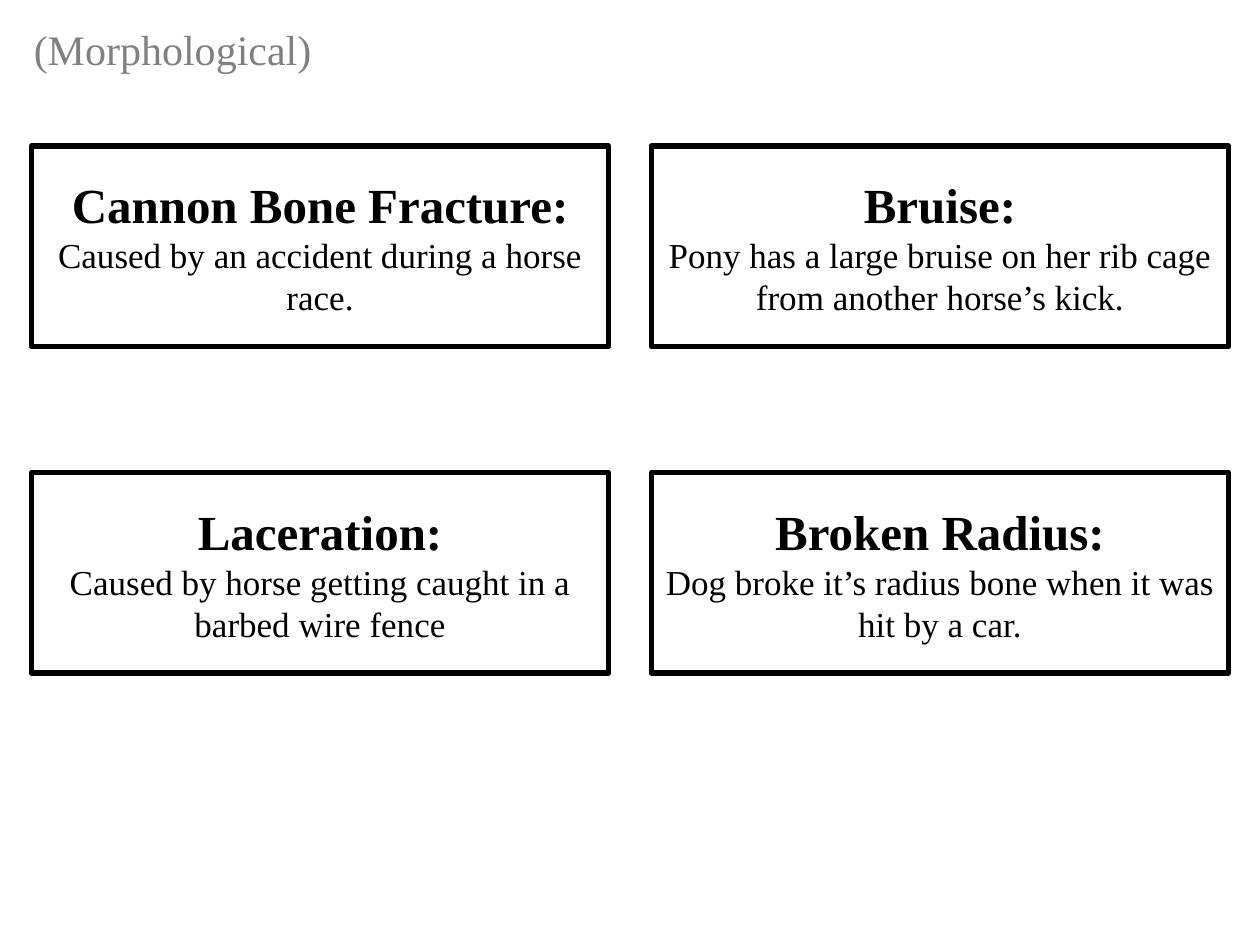
"""Build a slide of four boxed morphological injury examples."""
from pptx import Presentation, util as u
from pptx.dml.color import RGBColor
from pptx.enum import shapes, text

LABEL = "(Morphological)"
INJURIES = [
    [("Cannon Bone Fracture:", "Caused by an accident during a horse race."),
     ("Bruise:", "Pony has a large bruise on her rib cage from another horse’s kick.")],
    [("Laceration:", "Caused by horse getting caught in a barbed wire fence"),
     ("Broken Radius:", "Dog broke it’s radius bone when it was hit by a car.")],
]
FONT = "Times New Roman"
BLACK, GRAY = "000000", "808080"
LEFT, TOP = 0.25, 1.16
BOX_W, BOX_H = 4.58, 1.59
STEP_X, STEP_Y = 4.92, 2.59


def color(hex_code):
    return RGBColor.from_string(hex_code)


def add_run(p, words, size, hex_code, bold=False):
    r = p.add_run()
    r.text = words
    r.font.name = FONT
    r.font.size = u.Pt(size)
    r.font.bold = bold
    r.font.color.rgb = color(hex_code)


def add_label(s):
    sp = s.shapes.add_textbox(*map(u.Inches, (0.17, 0.14, 2.43, 0.5)))
    tf = sp.text_frame
    tf.word_wrap = False
    tf.auto_size = text.MSO_AUTO_SIZE.SHAPE_TO_FIT_TEXT
    add_run(tf.paragraphs[0], LABEL, 24, GRAY)


def add_injury(s, x, y, name, cause):
    sp = s.shapes.add_shape(shapes.MSO_SHAPE.RECTANGLE,
                            *map(u.Inches, (x, y, BOX_W, BOX_H)))
    sp.shadow.inherit = False
    sp.fill.background()
    sp.line.color.rgb = color(BLACK)
    sp.line.width = u.Pt(3.25)
    tf = sp.text_frame
    tf.word_wrap = True
    tf.vertical_anchor = text.MSO_ANCHOR.MIDDLE
    heading, detail = tf.paragraphs[0], tf.add_paragraph()
    heading.alignment = detail.alignment = text.PP_ALIGN.CENTER
    add_run(heading, name, 28, BLACK, bold=True)
    add_run(detail, cause, 20, BLACK)


def main():
    prs = Presentation()
    prs.slide_width, prs.slide_height = u.Inches(10), u.Inches(7.5)
    s = prs.slides.add_slide(prs.slide_layouts[6])
    for row, injuries in enumerate(INJURIES):
        for col, (name, cause) in enumerate(injuries):
            add_injury(s, LEFT + col * STEP_X, TOP + row * STEP_Y, name, cause)
    add_label(s)
    prs.save("out.pptx")


if __name__ == "__main__":
    main()
